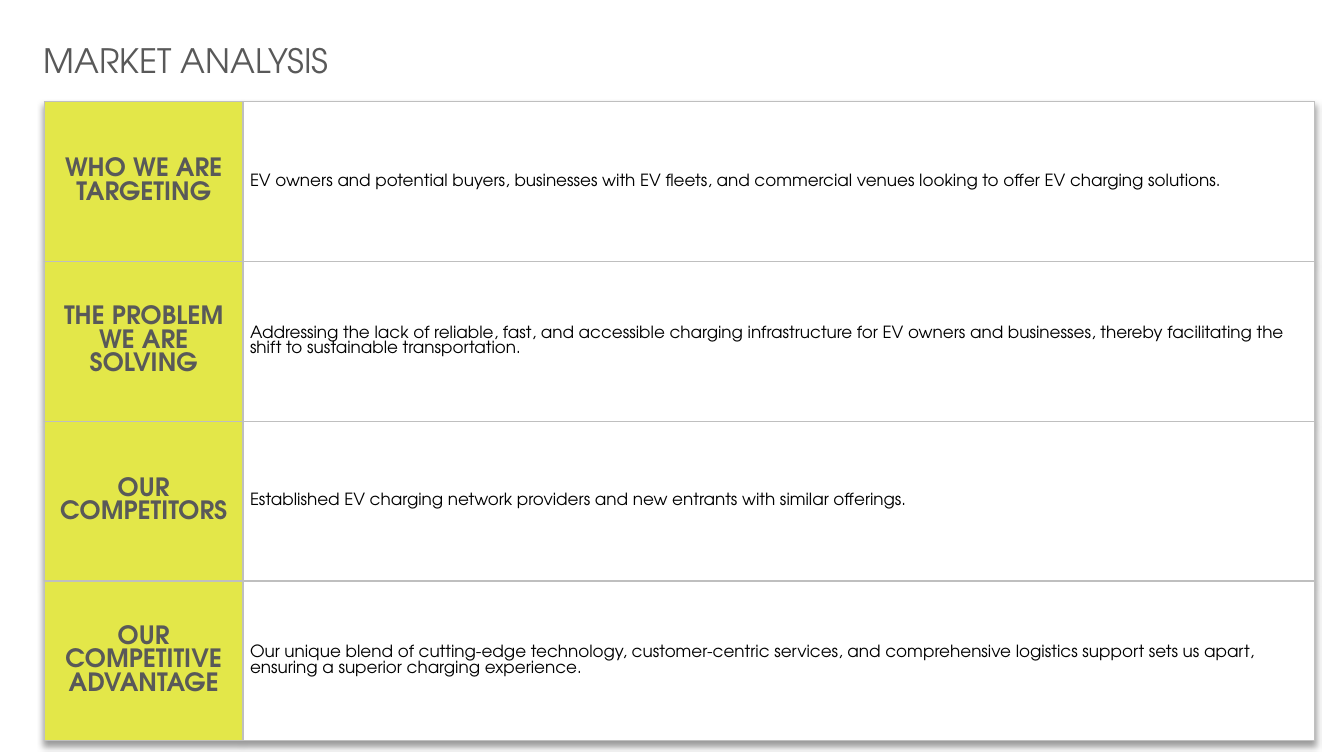
from dataclasses import dataclass

from lxml import etree
from pptx import Presentation
from pptx.dml.color import RGBColor
from pptx.enum.text import MSO_ANCHOR, PP_ALIGN
from pptx.oxml import parse_xml
from pptx.oxml.ns import qn
from pptx.slide import Slide
from pptx.table import Table, _Cell
from pptx.text.text import TextFrame
from pptx.util import Inches, Pt

FONT = "TeX Gyre Adventor"
COLORS = {
    "heading": "595959",
    "body": "000000",
    "label": "E3E749",
    "answer": "FFFFFF",
    "border": "BFBFBF",
}
DRAWING_NS = "http://schemas.openxmlformats.org/drawingml/2006/main"
COLUMN_WIDTHS = (1.97, 10.63)
TABLE_HEIGHT = 6.34


@dataclass(frozen=True)
class Topic:
    label: str
    answer: str


@dataclass(frozen=True)
class CellStyle:
    size: int
    color: str
    fill: str
    bold: bool
    align: PP_ALIGN
    side_margin: float
    end_margin: float


LABEL_STYLE = CellStyle(18, "heading", "label", True, PP_ALIGN.CENTER, 0.1, 0.05)
ANSWER_STYLE = CellStyle(12, "body", "answer", False, PP_ALIGN.LEFT, 0.07, 0)

TOPICS = (
    Topic(
        "WHO WE ARE TARGETING",
        "EV owners and potential buyers, businesses with EV fleets, and commercial "
        "venues looking to offer EV charging solutions.",
    ),
    Topic(
        "THE PROBLEM WE ARE SOLVING",
        "Addressing the lack of reliable, fast, and accessible charging infrastructure "
        "for EV owners and businesses, thereby facilitating the shift to sustainable "
        "transportation.",
    ),
    Topic(
        "OUR COMPETITORS",
        "Established EV charging network providers and new entrants with similar offerings.",
    ),
    Topic(
        "OUR COMPETITIVE ADVANTAGE",
        "Our unique blend of cutting-edge technology, customer-centric services, and "
        "comprehensive logistics support sets us apart, ensuring a superior charging "
        "experience.",
    ),
)


def write_text(frame: TextFrame, text: str, size: int, color: str,
               bold: bool, align: PP_ALIGN) -> None:
    frame.text = text
    paragraph = frame.paragraphs[0]
    paragraph.alignment = align
    font = paragraph.runs[0].font
    font.name = FONT
    font.size = Pt(size)
    font.bold = bold
    font.color.rgb = RGBColor.from_string(COLORS[color])


def add_borders(cell: _Cell) -> None:
    properties = cell._tc.get_or_add_tcPr()
    for position, side in enumerate(("lnL", "lnR", "lnT", "lnB")):
        border = parse_xml(
            f'<a:{side} xmlns:a="{DRAWING_NS}" w="{Pt(1)}"><a:solidFill>'
            f'<a:srgbClr val="{COLORS["border"]}"/></a:solidFill></a:{side}>'
        )
        properties.insert(position, border)


def fill_cell(cell: _Cell, text: str, style: CellStyle) -> None:
    write_text(cell.text_frame, text, style.size, style.color, style.bold, style.align)
    cell.vertical_anchor = MSO_ANCHOR.MIDDLE
    cell.margin_left = cell.margin_right = Inches(style.side_margin)
    cell.margin_top = cell.margin_bottom = Inches(style.end_margin)
    cell.fill.solid()
    cell.fill.fore_color.rgb = RGBColor.from_string(COLORS[style.fill])
    add_borders(cell)


def add_shadow(table: Table) -> None:
    properties = table._tbl.tblPr
    effects = etree.Element(qn("a:effectLst"))
    shadow = etree.SubElement(
        effects, qn("a:outerShdw"), blurRad=str(Pt(4)), dist=str(Pt(3)),
        dir="5400000", algn="t", rotWithShape="0",
    )
    black = etree.SubElement(shadow, qn("a:prstClr"), val="black")
    etree.SubElement(black, qn("a:alpha"), val="40000")
    properties.insert(0, effects)


def add_title(slide: Slide) -> None:
    title = slide.shapes.title
    title.left, title.top = Inches(0.33), Inches(0.35)
    title.width, title.height = Inches(8.08), Inches(0.5)
    title.text_frame.vertical_anchor = MSO_ANCHOR.TOP
    write_text(title.text_frame, "MARKET ANALYSIS", 24, "heading", False, PP_ALIGN.LEFT)


def add_topics(slide: Slide) -> None:
    table = slide.shapes.add_table(
        len(TOPICS), len(COLUMN_WIDTHS), Inches(0.44), Inches(1.01),
        Inches(sum(COLUMN_WIDTHS)), Inches(TABLE_HEIGHT),
    ).table
    table.first_row = table.horz_banding = False
    for column, width in zip(table.columns, COLUMN_WIDTHS):
        column.width = Inches(width)
    for row, topic in zip(table.rows, TOPICS):
        fill_cell(row.cells[0], topic.label, LABEL_STYLE)
        fill_cell(row.cells[1], topic.answer, ANSWER_STYLE)
    add_shadow(table)


def main() -> None:
    presentation = Presentation()
    presentation.slide_width = Inches(13.33)
    presentation.slide_height = Inches(7.5)
    slide = presentation.slides.add_slide(presentation.slide_layouts[5])
    add_title(slide)
    add_topics(slide)
    presentation.save("out.pptx")


if __name__ == "__main__":
    main()
